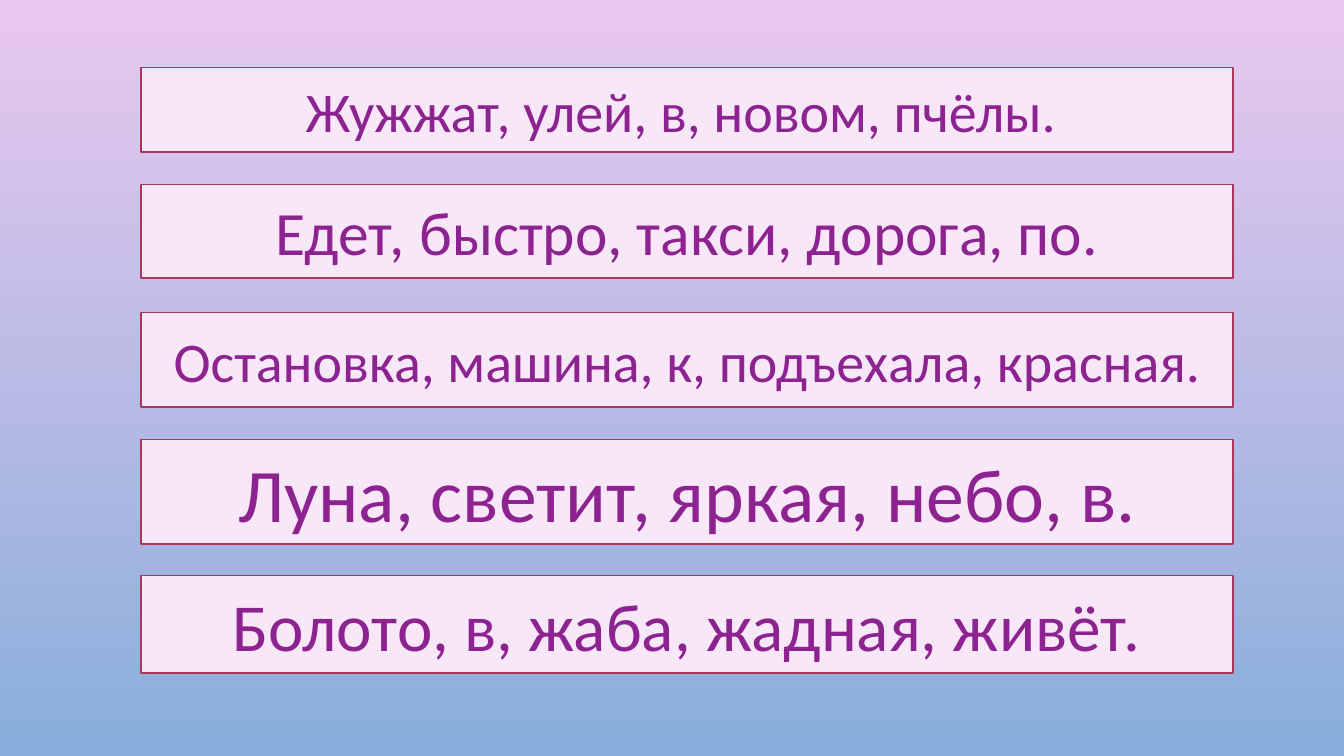
from dataclasses import dataclass

from pptx import Presentation
from pptx.dml.color import RGBColor
from pptx.enum.shapes import MSO_SHAPE
from pptx.enum.text import MSO_ANCHOR, PP_ALIGN
from pptx.util import Inches, Length, Pt

WIDTH, HEIGHT = Inches(13.33), Inches(7.5)
LEFT_PERCENT, WIDTH_PERCENT = 10.5, 81.25


@dataclass(frozen=True)
class Sentence:
    text: str
    top_percent: float
    height_percent: float
    size: int


SENTENCES = [
    Sentence("Жужжат, улей, в, новом, пчёлы. ", 8.93, 11.2, 40),
    Sentence("Едет, быстро, такси, дорога, по.", 24.4, 12.4, 44),
    Sentence("Остановка, машина, к, подъехала, красная.", 41.33, 12.53, 40),
    Sentence("Луна, светит, яркая, небо, в.", 58.13, 13.87, 54),
    Sentence("Болото, в, жаба, жадная, живёт.", 76.13, 12.93, 48),
]


def colour(value: str) -> RGBColor:
    return RGBColor.from_string(value)


def share(total: Length, percent: float) -> Length:
    return Length(round(total * percent / 100))


def paint_background(page) -> None:
    fill = page.background.fill
    fill.gradient()
    fill.gradient_angle = 270
    for stop, (position, value) in zip(fill.gradient_stops, [(0, "E9C8EF"), (1, "89AEDB")]):
        stop.position = position
        stop.color.rgb = colour(value)


def draw_sentence(page, sentence: Sentence) -> None:
    box = page.shapes.add_shape(
        MSO_SHAPE.RECTANGLE,
        share(WIDTH, LEFT_PERCENT),
        share(HEIGHT, sentence.top_percent),
        share(WIDTH, WIDTH_PERCENT),
        share(HEIGHT, sentence.height_percent),
    )
    box.shadow.inherit = False
    box.fill.solid()
    box.fill.fore_color.rgb = colour("F8E7F9")
    box.line.color.rgb = colour("A8375A")
    box.line.width = Pt(1.25)
    frame = box.text_frame
    frame.word_wrap = True
    frame.vertical_anchor = MSO_ANCHOR.MIDDLE
    frame.text = sentence.text
    para = frame.paragraphs[0]
    para.alignment = PP_ALIGN.CENTER
    span = para.runs[0]
    span.font.name = "Calibri"
    span.font.size = Pt(sentence.size)
    span.font.color.rgb = colour("8C2390")


def main() -> None:
    deck = Presentation()
    deck.slide_width, deck.slide_height = WIDTH, HEIGHT
    page = deck.slides.add_slide(deck.slide_layouts[6])
    paint_background(page)
    for sentence in SENTENCES:
        draw_sentence(page, sentence)
    deck.save("out.pptx")


if __name__ == "__main__":
    main()
